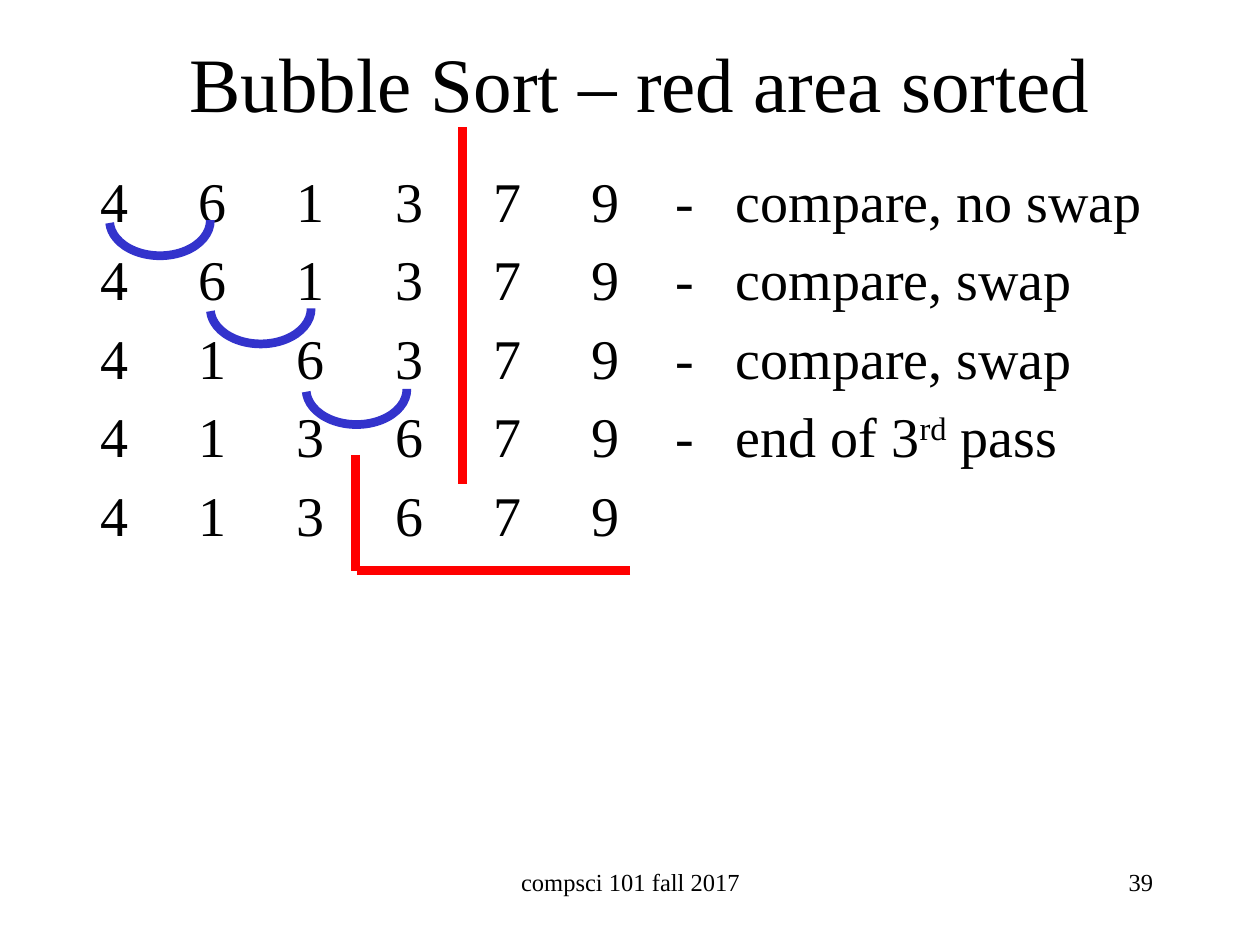
"""Build a slide tracing the third pass of a bubble sort."""
from lxml.etree import SubElement
from pptx import Presentation
from pptx.dml.color import RGBColor
from pptx.enum.shapes import MSO_CONNECTOR as CONN, MSO_SHAPE as SHAPE
from pptx.enum.text import MSO_ANCHOR as ANCHOR, MSO_AUTO_SIZE as FIT, PP_ALIGN as ALIGN
from pptx.oxml.ns import qn
from pptx.util import Inches, Pt


def rgb(value):
    return RGBColor.from_string(value)


def add_run(p, text, size, **attrs):
    r = p.add_run()
    r.text = text
    fmt = {"name": "Times New Roman", "size": Pt(size)}
    for key, value in fmt.items():
        setattr(r.font, key, value)
    r.font.color.rgb = rgb("000000")
    for key, value in attrs.items():
        r.font._element.set(key, str(value))


prs = Presentation()
prs.slide_width, prs.slide_height = Inches(10), Inches(7.5)
s = prs.slides.add_slide(prs.slide_layouts[1])
title, body = s.placeholders

boxes = [
    (title, (0.83, 0.02, 8.5, 1.25), ANCHOR.MIDDLE),
    (body, (0.7, 1.27, 9, 5.92), ANCHOR.TOP),
]
for sp, box, anchor in boxes:
    sp.left, sp.top, sp.width, sp.height = [Inches(v) for v in box]
    fmt = {"word_wrap": True, "auto_size": FIT.NONE, "vertical_anchor": anchor}
    for key, value in fmt.items():
        setattr(sp.text_frame, key, value)

p = title.text_frame.paragraphs[0]
p.alignment = ALIGN.CENTER
add_run(p, "Bubble Sort – red area sorted", 44)

rows = [
    ("461379", "compare, no swap"),
    ("461379", "compare, swap"),
    ("416379", "compare, swap"),
    ("413679", "end of 3^rd^ pass"),
    ("413679", ""),
]
digit_gap, dash_gap, note_gap = 3200, 2400, 1600
tf = body.text_frame
for i, (digits, note) in enumerate(rows):
    p = tf.add_paragraph() if i else tf.paragraphs[0]
    pPr = p._p.get_or_add_pPr()
    pPr.set("marL", "0")
    pPr.set("indent", "0")
    SubElement(pPr, qn("a:buNone"))
    add_run(p, digits[0], 32)
    for digit in digits[1:]:
        add_run(p, " ", 32, spc=digit_gap)
        add_run(p, digit, 32)
    if note:
        add_run(p, " ", 32, spc=dash_gap)
        add_run(p, "-", 32)
        add_run(p, " ", 32, spc=note_gap)
        for j, part in enumerate(note.split("^")):
            add_run(p, part, 32, baseline=30000 if j == 1 else 0)

for left, top in [(0.87, 1.47), (1.67, 2.17), (2.43, 2.81)]:
    sp = s.shapes.add_shape(SHAPE.ARC, Inches(left), Inches(top), Inches(0.8), Inches(0.56))
    sp.adjustments[0], sp.adjustments[1] = 215.73, 106.31
    sp.shadow.inherit = False
    sp.fill.background()
    sp.line.color.rgb = rgb("3333CC")
    sp.line.width = Pt(5)

rise = 0.92
lines = [(5, 4.53, 2.83, 4.53)]
lines += [(3.67, top, 3.67, top + rise) for top in (1.01, 1.71, 2.26, 2.92)]
lines.append((2.82, 3.61, 2.82, 3.61 + rise))
for ends in lines:
    c = s.shapes.add_connector(CONN.STRAIGHT, *[Inches(v) for v in ends])
    c.line.color.rgb = rgb("FF0000")
    c.line.width = Pt(5)
    SubElement(c._element.spPr, qn("a:effectLst"))

footers = [
    ("compsci 101 fall 2017", 3.42, 3.17, ALIGN.CENTER),
    ("39", 7.17, 2.08, ALIGN.RIGHT),
]
for text, left, width, align in footers:
    sp = s.shapes.add_textbox(Inches(left), Inches(6.83), Inches(width), Inches(0.5))
    sp.text_frame.word_wrap = True
    p = sp.text_frame.paragraphs[0]
    p.alignment = align
    add_run(p, text, 14)

prs.save("out.pptx")
